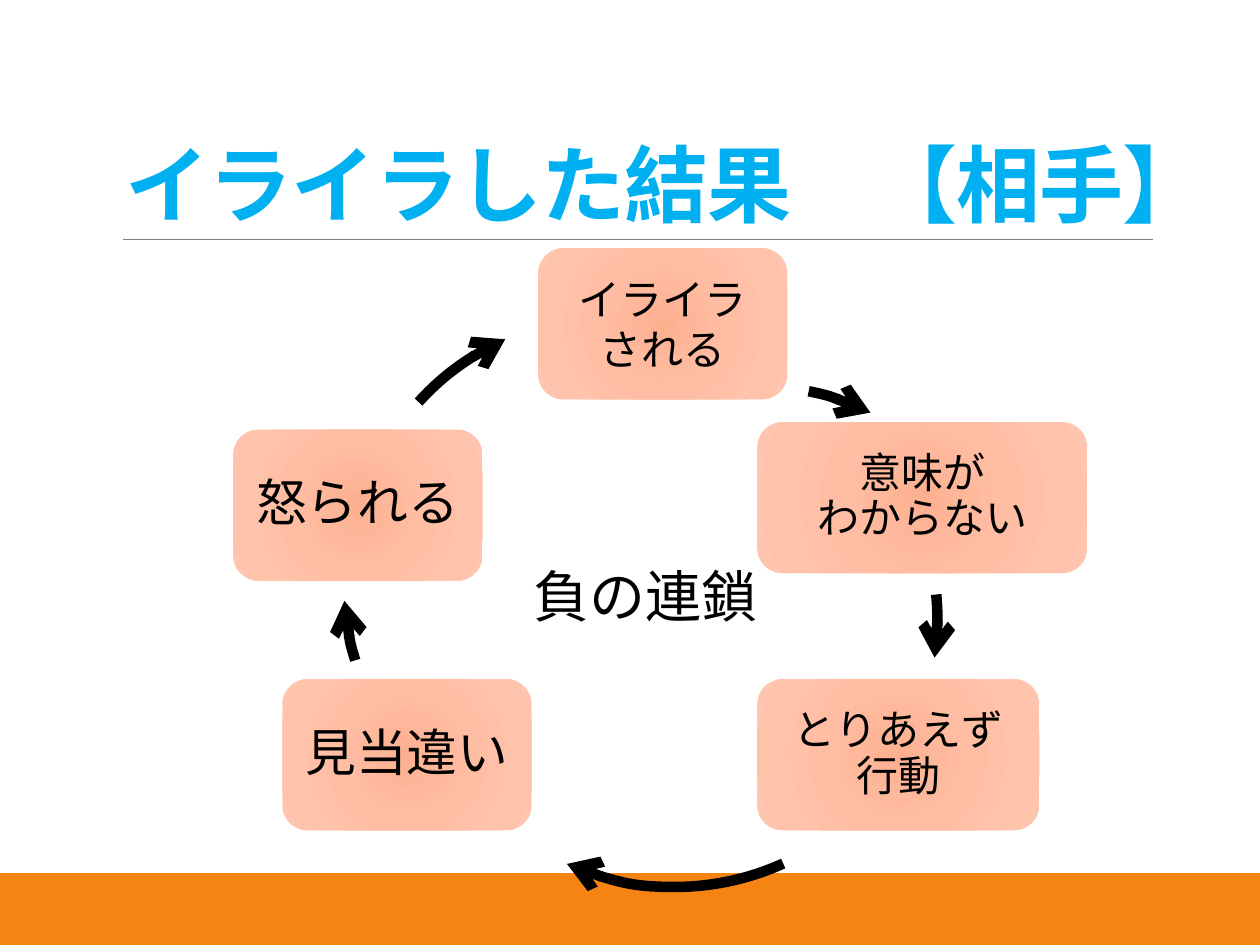
from typing import NamedTuple

from lxml import etree
from pptx import Presentation
from pptx.dml.color import RGBColor
from pptx.enum import shapes, text
from pptx.oxml import parse_xml
from pptx.oxml.ns import nsdecls, qn
from pptx.util import Inches, Pt

ORANGE = RGBColor(0xF5, 0x84, 0x13)
BLUE = RGBColor(0x00, 0xB0, 0xF0)
GRAY = RGBColor(0x80, 0x80, 0x80)
BLACK = RGBColor(0, 0, 0)
WHITE = RGBColor(255, 255, 255)
PEACH = ((0, RGBColor(0xFC, 0xB0, 0x90)),
         (45, RGBColor(0xFF, 0xBE, 0xA4)),
         (100, RGBColor(0xFF, 0xC5, 0xAF)))
JAPAN = "Noto Sans CJK JP"
KIND = shapes.MSO_SHAPE


class Step(NamedTuple):
    lines: tuple[str, ...]
    left: float
    top: float
    width: float = 1.98
    size: int = 24
    inset: float = 0.1
    space: float = 0.9


class Bend(NamedTuple):
    left: float
    top: float
    start: float  # degrees, clockwise from the right
    end: float


HIGH = 1.2   # height of every step
RING = 4.17  # diameter of every arrow's circle

# Each step is followed by the arrow that leads on from it
CYCLE = (
    (Step(("イライラ", "される"), 4.27, 1.97, space=1.0), Bend(3.9, 3.06, 282, 296.3)),
    (Step(("意味が", "わからない"), 6.01, 3.35, 2.62), Bend(3.27, 2.83, 354.6, 8.4)),
    (Step(("とりあえず", "行動"), 6.01, 5.39, 2.24), Bend(3.27, 2.87, 65.6, 114.2)),
    (Step(("見当違い",), 2.24, 5.39, size=29, inset=0.12), Bend(2.73, 2.55, 163.1, 176.3)),
    (Step(("怒られる",), 1.85, 3.41, size=29, inset=0.12), Bend(2.78, 2.51, 222.3, 245.8)),
)


def write(shape, *lines: str, size: float, font: str = "Calibri", color=BLACK,
          bold: bool = False, align=text.PP_ALIGN.CENTER,
          anchor=text.MSO_ANCHOR.MIDDLE, space: float = 1.0,
          inset: float | None = None, track: float = 0) -> None:
    frame = shape.text_frame
    frame.word_wrap = True
    frame.vertical_anchor = anchor
    if inset is not None:
        frame.margin_left = frame.margin_right = Inches(inset)
        frame.margin_top = frame.margin_bottom = Inches(inset)
    for i, line in enumerate(lines):
        para = frame.paragraphs[0] if i == 0 else frame.add_paragraph()
        para.alignment = align
        para.line_spacing = space
        run = para.add_run()
        run.text = line
        run.font.size = Pt(size)
        run.font.name = font
        run.font.bold = bold
        run.font.color.rgb = color
        if font == JAPAN:
            props = run.font._element
            etree.SubElement(props, qn("a:ea")).set("typeface", font)
            if track:
                props.set("spc", str(int(track * 100)))


def block(slide, kind, left: float, top: float, width: float, height: float, fill=None):
    shape = slide.shapes.add_shape(
        kind, Inches(left), Inches(top), Inches(width), Inches(height))
    shape.shadow.inherit = False
    shape.line.fill.background()
    if fill is None:
        shape.fill.background()
    else:
        shape.fill.solid()
        shape.fill.fore_color.rgb = fill
    return shape


def glow(shape) -> None:
    """Fill a shape with the radial peach gradient."""
    stops = "".join(f'<a:gs pos="{pos * 1000}"><a:srgbClr val="{color}"/></a:gs>'
                    for pos, color in PEACH)
    grad = parse_xml(
        f'<a:gradFill {nsdecls("a")} rotWithShape="1"><a:gsLst>{stops}</a:gsLst>'
        '<a:path path="circle"><a:fillToRect l="100000" t="100000" r="100000" b="100000"/>'
        '</a:path></a:gradFill>')
    props = shape._element.spPr
    props.replace(props.find(qn("a:solidFill")), grad)


def draw_step(slide, step: Step) -> None:
    box = block(slide, KIND.ROUNDED_RECTANGLE, step.left, step.top,
                step.width, HIGH, PEACH[0][1])
    glow(box)
    write(box, *step.lines, size=step.size, space=step.space, inset=step.inset)


def draw_bend(slide, bend: Bend) -> None:
    arc = block(slide, KIND.ARC, bend.left, bend.top, RING, RING)
    # Arc angles are stored in 60000ths of a degree, adjustments in 100000ths
    arc.adjustments[0] = bend.start * 0.6
    arc.adjustments[1] = bend.end * 0.6
    arc.line.color.rgb = BLACK
    arc.line.width = Pt(6)
    line = arc._element.spPr.find(qn("a:ln"))
    etree.SubElement(line, qn("a:tailEnd")).set("type", "arrow")


def main() -> None:
    deck = Presentation()
    deck.slide_width, deck.slide_height = Inches(10), Inches(7.5)
    slide = deck.slides.add_slide(deck.slide_layouts[6])

    # Footer bands and title rule
    block(slide, KIND.RECTANGLE, 0, 7, 10, 0.5, ORANGE)
    block(slide, KIND.RECTANGLE, 0, 6.93, 10, 0.07, ORANGE)
    rule = slide.shapes.add_connector(
        shapes.MSO_CONNECTOR.STRAIGHT, Inches(0.98), Inches(1.9), Inches(9.15), Inches(1.9))
    rule.line.color.rgb = GRAY
    rule.line.width = Pt(0.5)
    etree.SubElement(rule._element.spPr, qn("a:effectLst"))

    # Centre label
    label = block(slide, KIND.RECTANGLE, 3.71, 4.35, 2.83, 0.75, WHITE)
    write(label, "負の連鎖", size=32, font=JAPAN)

    # Title
    title = slide.shapes.add_textbox(Inches(0.9), Inches(0.31), Inches(8.98), Inches(1.59))
    write(title, "イライラした結果　【相手】", size=48, font=JAPAN, color=BLUE, bold=True,
          align=text.PP_ALIGN.LEFT, anchor=text.MSO_ANCHOR.BOTTOM, space=0.85, track=-0.5)

    # Cycle of steps and arrows
    for step, bend in CYCLE:
        draw_step(slide, step)
        draw_bend(slide, bend)

    deck.save("out.pptx")


if __name__ == "__main__":
    main()
